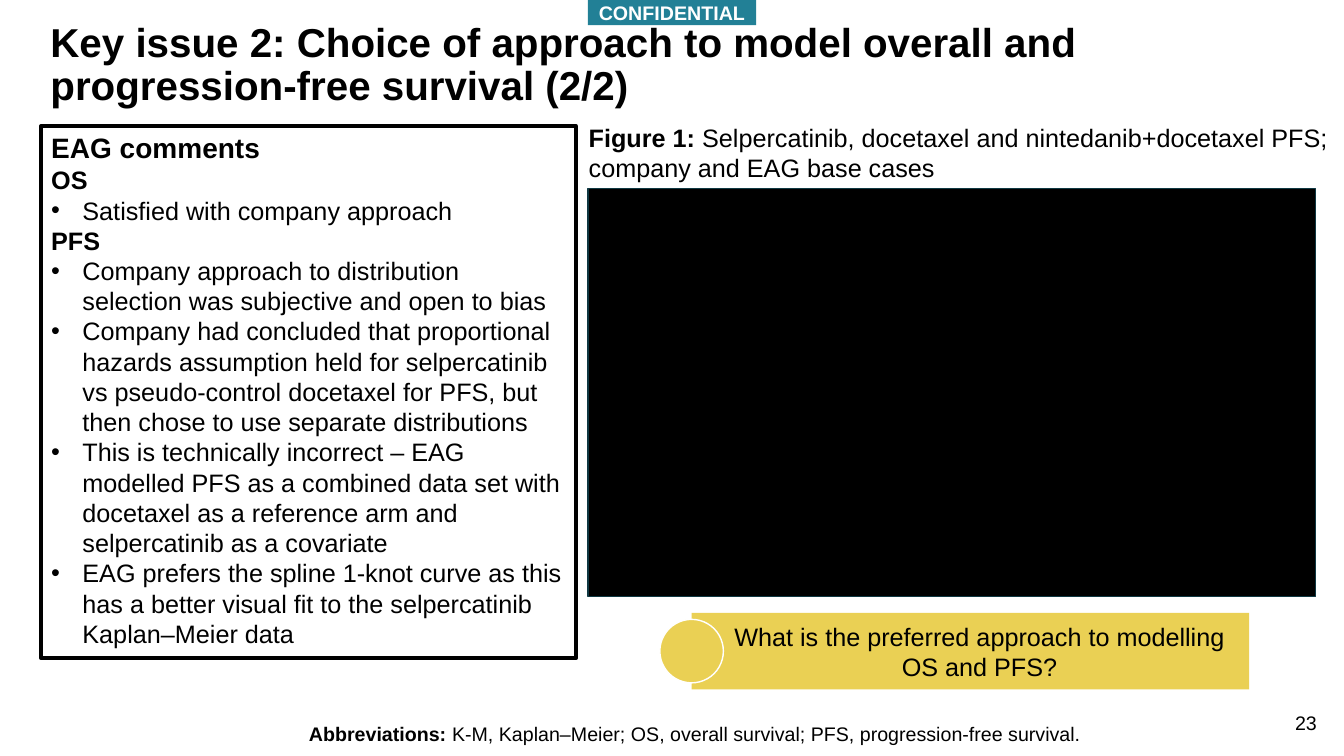
from lxml import etree
from pptx import Presentation
from pptx.dml.color import RGBColor
from pptx.enum.shapes import MSO_SHAPE
from pptx.enum.text import MSO_ANCHOR, MSO_AUTO_SIZE, PP_ALIGN
from pptx.oxml.ns import qn
from pptx.util import Emu, Inches, Pt

RECTANGLE, OVAL = MSO_SHAPE.RECTANGLE, MSO_SHAPE.OVAL
LEFT, CENTER, RIGHT = PP_ALIGN.LEFT, PP_ALIGN.CENTER, PP_ALIGN.RIGHT
TOP, MIDDLE = MSO_ANCHOR.TOP, MSO_ANCHOR.MIDDLE
NO_AUTO_SIZE = MSO_AUTO_SIZE.NONE

BLACK = RGBColor(0x00, 0x00, 0x00)
WHITE = RGBColor(0xFF, 0xFF, 0xFF)
TEAL = RGBColor(0x22, 0x80, 0x96)
DARK_TEAL = RGBColor(0x0F, 0x38, 0x42)
YELLOW = RGBColor(0xEA, 0xD0, 0x54)

FONT = "Arial"
BULLET_INDENT = Inches(0.31)
TITLE_ONLY = 5

TITLE = ("Key issue 2: Choice of approach to model overall and "
         "progression-free survival (2/2)")
COMMENT_SECTIONS = [
    ("OS", ["Satisfied with company approach"]),
    ("PFS", [
        "Company approach to distribution selection was subjective and open to bias",
        "Company had concluded that proportional hazards assumption held for "
        "selpercatinib vs pseudo-control docetaxel for PFS, but then chose to use "
        "separate distributions",
        "This is technically incorrect – EAG modelled PFS as a combined data set with "
        "docetaxel as a reference arm and selpercatinib as a covariate",
        "EAG prefers the spline 1-knot curve as this has a better visual fit to the "
        "selpercatinib Kaplan–Meier data",
    ]),
]
FIGURE_CAPTION = [
    ("Figure 1: ", True),
    ("Selpercatinib, docetaxel and nintedanib+docetaxel PFS; "
     "company and EAG base cases", False),
]
ABBREVIATIONS = [
    ("Abbreviations: ", True),
    ("K-M, Kaplan–Meier; OS, overall survival; PFS, progression-free survival.", False),
]


def inches(*lengths):
    return [Inches(length) for length in lengths]


def write_paragraph(paragraph, parts, size, color=BLACK, alignment=LEFT, spacing=1.0):
    paragraph.alignment = alignment
    paragraph.line_spacing = spacing
    for text, bold in parts:
        run = paragraph.add_run()
        run.text = text
        run.font.name = FONT
        run.font.size = Pt(size)
        run.font.bold = bold
        run.font.color.rgb = color


def add_bullet(paragraph):
    properties = paragraph._p.get_or_add_pPr()
    properties.set("marL", str(BULLET_INDENT))
    properties.set("indent", str(-BULLET_INDENT))
    etree.SubElement(properties, qn("a:buFont")).set("typeface", FONT)
    etree.SubElement(properties, qn("a:buChar")).set("char", "•")


def add_block(slide, box, fill, line=None, line_width=1, kind=RECTANGLE, anchor=MIDDLE):
    shape = slide.shapes.add_shape(kind, *box)
    shape.shadow.inherit = False
    shape.fill.solid()
    shape.fill.fore_color.rgb = fill
    if line is None:
        shape.line.fill.background()
    else:
        shape.line.color.rgb = line
        shape.line.width = Pt(line_width)
    shape.text_frame.word_wrap = True
    shape.text_frame.vertical_anchor = anchor
    return shape


def add_text(slide, box, parts, size, alignment=LEFT, spacing=1.0):
    text_frame = slide.shapes.add_textbox(*box).text_frame
    text_frame.word_wrap = True
    write_paragraph(text_frame.paragraphs[0], parts, size, BLACK, alignment, spacing)


def place_title(slide, box):
    title = slide.shapes.title
    title.left, title.top, title.width, title.height = box
    title.text_frame.word_wrap = True
    title.text_frame.auto_size = NO_AUTO_SIZE
    title.text_frame.vertical_anchor = TOP
    write_paragraph(title.text_frame.paragraphs[0], [(TITLE, True)], 28.8, spacing=0.9)


def add_comments(slide, box):
    text_frame = add_block(slide, box, WHITE, BLACK, 3, anchor=TOP).text_frame
    write_paragraph(text_frame.paragraphs[0], [("EAG comments", True)], 20)
    for heading, comments in COMMENT_SECTIONS:
        write_paragraph(text_frame.add_paragraph(), [(heading, True)], 18)
        for comment in comments:
            paragraph = text_frame.add_paragraph()
            add_bullet(paragraph)
            write_paragraph(paragraph, [(comment, False)], 18)


def add_figure(slide, box):
    left, top, width, height = box
    caption_height = Inches(0.71)
    add_text(slide, (left - Inches(0.09), top, width + Inches(0.37), caption_height),
             FIGURE_CAPTION, 18)
    add_block(slide, (left, top + caption_height, width, height - caption_height),
              BLACK, DARK_TEAL)


def add_question(slide, box):
    left, top, width, height = box
    diameter = Inches(0.63)
    banner = add_block(slide, box, YELLOW)
    banner.text_frame.margin_left = Inches(0.28)
    write_paragraph(banner.text_frame.paragraphs[0],
                    [("What is the preferred approach to modelling OS and PFS?", False)],
                    18, alignment=CENTER)
    circle_box = (Emu(left - diameter // 2), Emu(top + (height - diameter) // 2),
                  diameter, diameter)
    add_block(slide, circle_box, YELLOW, WHITE, kind=OVAL)


def add_confidential_tag(slide, box):
    tag = add_block(slide, box, TEAL)
    write_paragraph(tag.text_frame.paragraphs[0], [("CONFIDENTIAL", True)],
                    14, WHITE, CENTER)


def add_footer(slide, abbreviations_box, number_box):
    add_text(slide, abbreviations_box, ABBREVIATIONS, 14, CENTER, 0.9)
    add_text(slide, number_box, [("23", False)], 14, RIGHT)


def main():
    presentation = Presentation()
    presentation.slide_width, presentation.slide_height = inches(13.33, 7.5)
    slide = presentation.slides.add_slide(presentation.slide_layouts[TITLE_ONLY])
    place_title(slide, inches(0.4, 0.17, 12.3, 0.65))
    add_comments(slide, inches(0.41, 1.25, 5.3, 5.28))
    add_figure(slide, inches(5.83, 1.16, 7.22, 4.76))
    add_question(slide, inches(6.86, 6.08, 5.53, 0.76))
    add_confidential_tag(slide, inches(5.83, 0, 1.67, 0.25))
    add_footer(slide, inches(2.33, 7.14, 9.13, 0.36), inches(12.65, 7, 0.51, 0.4))
    presentation.save("out.pptx")


if __name__ == "__main__":
    main()
